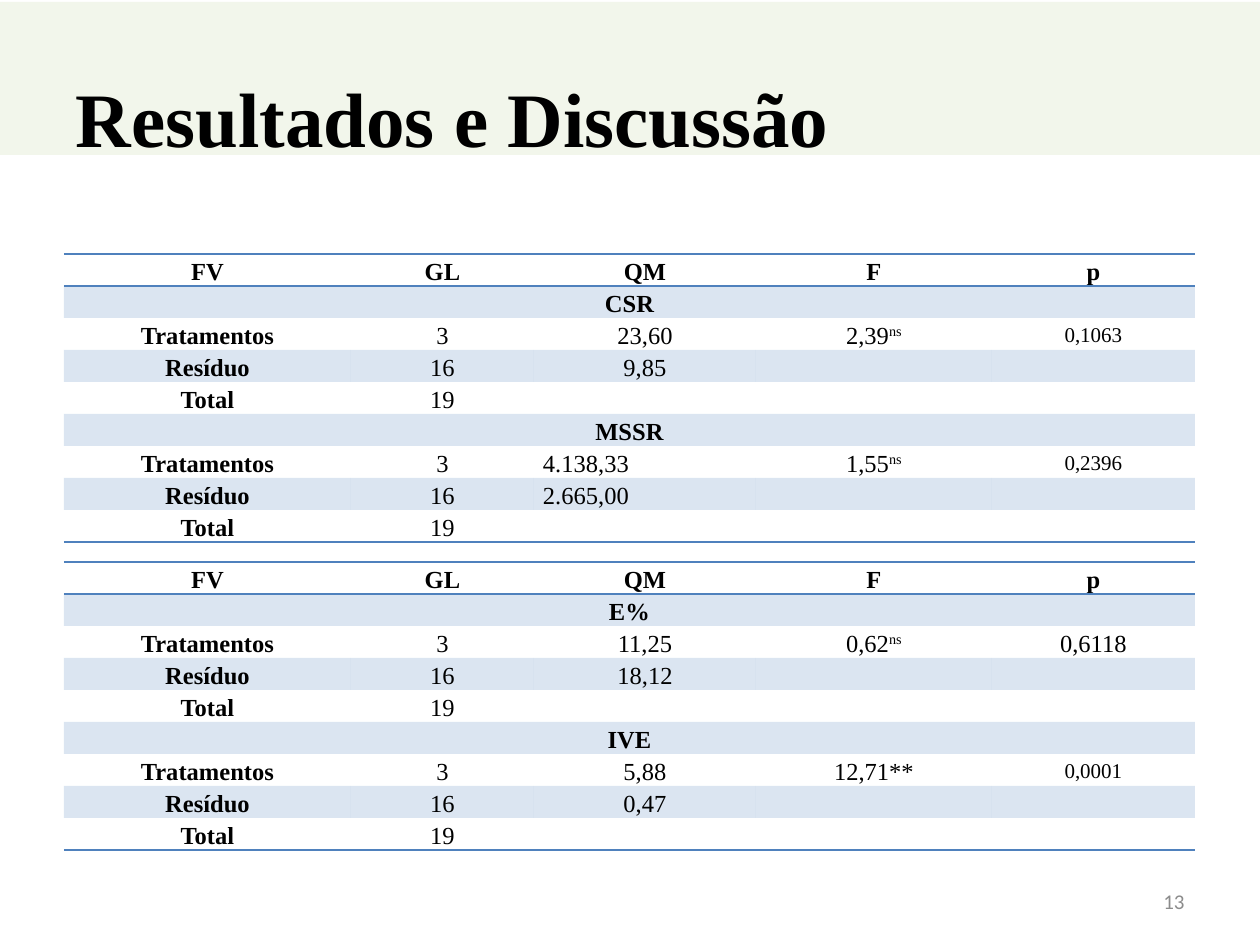
import pptx
import pptx.util
import pptx.dml.color
import pptx.enum.shapes
import pptx.enum.text
import pptx.oxml
import pptx.oxml.ns
import lxml.etree

COLORS = {"band": "D7E4BD", "accent": "4F81BD", "text": "000000", "number": "8C8C8C"}
SERIF = "Times New Roman"
NO_STYLE = "{2D5ABB26-0587-4C30-8999-92F81FD0307C}"
ALIGN = pptx.enum.text.PP_ALIGN
MIDDLE = pptx.enum.text.MSO_ANCHOR.MIDDLE
COLUMNS = [287, 183, 222, 236, 203]
HEADER = ["FV", "GL", "QM", "F", "p"]


def px(n):
    """Turn pixels at 126 to the inch into EMU."""
    return pptx.util.Emu(round(n * 914400 / 126))


def rgb(name):
    """Look up a palette colour."""
    return pptx.dml.color.RGBColor.from_string(COLORS[name])


def sub(parent, tag, **attrs):
    """Append a DrawingML element with attributes."""
    return lxml.etree.SubElement(parent, pptx.oxml.ns.qn(tag), **attrs)


class Deck:
    """Holds the style and the current slide."""

    def __init__(self):
        """Start a presentation with one title slide."""
        self.prs = pptx.Presentation()
        self.prs.slide_width, self.prs.slide_height = px(1260), px(945)
        self.s = self.prs.slides.add_slide(self.prs.slide_layouts[5])

    def font(self, r, size, color="text", bold=False, name=SERIF):
        """Format a run."""
        r.font.size, r.font.bold, r.font.name = pptx.util.Pt(size), bold, name
        r.font.color.rgb = rgb(color)

    def fill(self, target, color, alpha):
        """Fill a shape or cell with a transparent colour."""
        target.fill.solid()
        target.fill.fore_color.rgb = rgb(color)
        for clr in target._element.iter(pptx.oxml.ns.qn("a:srgbClr")) if hasattr(target, "_element") else target._tc.tcPr.iter(pptx.oxml.ns.qn("a:srgbClr")):
            sub(clr, "a:alpha", val=str(alpha * 1000))

    def band(self, x, y, w, h):
        """Draw the pale band behind the title."""
        sp = self.s.shapes.add_shape(pptx.enum.shapes.MSO_SHAPE.RECTANGLE, px(x), px(y), px(w), px(h))
        sp.shadow.inherit = False
        self.fill(sp, "band", 30)
        sp.line.fill.background()
        self.s.shapes._spTree.insert(2, sp._element)

    def text(self, sp, text, align, size, **style):
        """Write one formatted line into a shape."""
        tf = sp.text_frame
        tf.text, tf.word_wrap, tf.vertical_anchor = text, True, MIDDLE
        p = tf.paragraphs[0]
        p.alignment = align
        self.font(p.runs[0], size, **style)

    def title(self, x, y, w, h, text):
        """Place the title placeholder."""
        sp = self.s.shapes.title
        sp.left, sp.top, sp.width, sp.height = px(x), px(y), px(w), px(h)
        self.text(sp, text, ALIGN.LEFT, 44, bold=True)

    def number(self, x, y, w, h, text):
        """Place the slide number."""
        sp = self.s.shapes.add_textbox(px(x), px(y), px(w), px(h))
        self.text(sp, text, ALIGN.RIGHT, 12, color="number", name="Calibri")

    def border(self, cell, tag):
        """Rule one side of a cell."""
        ln = pptx.oxml.parse_xml(
            f'<a:{tag} {pptx.oxml.ns.nsdecls("a")} w="12700"><a:solidFill>'
            f'<a:srgbClr val="{COLORS["accent"]}"/></a:solidFill></a:{tag}>')
        tcPr = cell._tc.get_or_add_tcPr()
        tcPr.insert(len(tcPr.findall(pptx.oxml.ns.qn("a:lnT"))), ln)

    def cell(self, cell, text, bold, size=14, align=ALIGN.CENTER):
        """Write a cell; text after ^ is superscript."""
        cell.vertical_anchor = MIDDLE
        cell.margin_left = cell.margin_right = px(9)
        cell.margin_top = cell.margin_bottom = 0
        main, _, raised = text.partition("^")
        p = cell.text_frame.paragraphs[0]
        p.alignment, p.line_spacing = align, 1.15
        if not main:
            sub(p._p, "a:endParaRPr", sz=str(size * 100))
            return
        p.text = main
        if raised:
            r = p.add_run()
            r.text = raised
            r._r.get_or_add_rPr().set("baseline", "30000")
        for r in p.runs:
            self.font(r, size, bold=bold)

    def anova(self, x, y, row_h, groups):
        """Build a variance table from groups of sources."""
        rows = [HEADER]
        sizes, aligns = {}, {}
        for name, qm, f, p, p_size, qm_align in groups:
            sizes[len(rows) + 1, 4] = p_size
            aligns[len(rows) + 1, 2] = aligns[len(rows) + 2, 2] = qm_align
            rows += [[name], ["Tratamentos", "3", qm[0], f, p],
                     ["Resíduo", "16", qm[1], "", ""], ["Total", "19", "", "", ""]]
        tbl = self.s.shapes.add_table(len(rows), len(HEADER), px(x), px(y),
                                      px(sum(COLUMNS)), px(row_h * len(rows))).table
        tbl.first_row = tbl.horz_banding = False
        tbl._tbl.tblPr.find(pptx.oxml.ns.qn("a:tableStyleId")).text = NO_STYLE
        for col, w in zip(tbl.columns, COLUMNS):
            col.width = px(w)
        for i, row in enumerate(rows):
            tbl.rows[i].height = px(row_h)
            for j in range(len(HEADER)):
                cell = tbl.cell(i, j)
                text = row[j] if j < len(row) else ""
                self.cell(cell, text, i == 0 or j == 0, sizes.get((i, j), 14),
                          aligns.get((i, j), ALIGN.CENTER))
                if i % 2:
                    self.fill(cell, "accent", 20)
                else:
                    cell.fill.background()
                if i == 0:
                    self.border(cell, "lnT")
                if i in (0, len(rows) - 1):
                    self.border(cell, "lnB")
            if len(row) == 1:
                tbl.cell(i, 0).merge(tbl.cell(i, len(HEADER) - 1))


def main():
    """Build the results slide."""
    deck = Deck()
    deck.band(0, 2, 1260, 153)
    deck.title(63, 38, 1134, 157, "Resultados e Discussão")
    deck.anova(64, 254, 32, [
        ("CSR", ("23,60", "9,85"), "2,39^ns", "0,1063", 12, ALIGN.CENTER),
        ("MSSR", ("4.138,33", "2.665,00"), "1,55^ns", "0,2396", 12, ALIGN.LEFT)])
    deck.anova(64, 562, 32, [
        ("E%", ("11,25", "18,12"), "0,62^ns", "0,6118", 14, ALIGN.CENTER),
        ("IVE", ("5,88", "0,47"), "12,71**", "0,0001", 12, ALIGN.CENTER)])
    deck.number(903, 876, 294, 50, "13")
    deck.prs.save("out.pptx")


if __name__ == "__main__":
    main()
